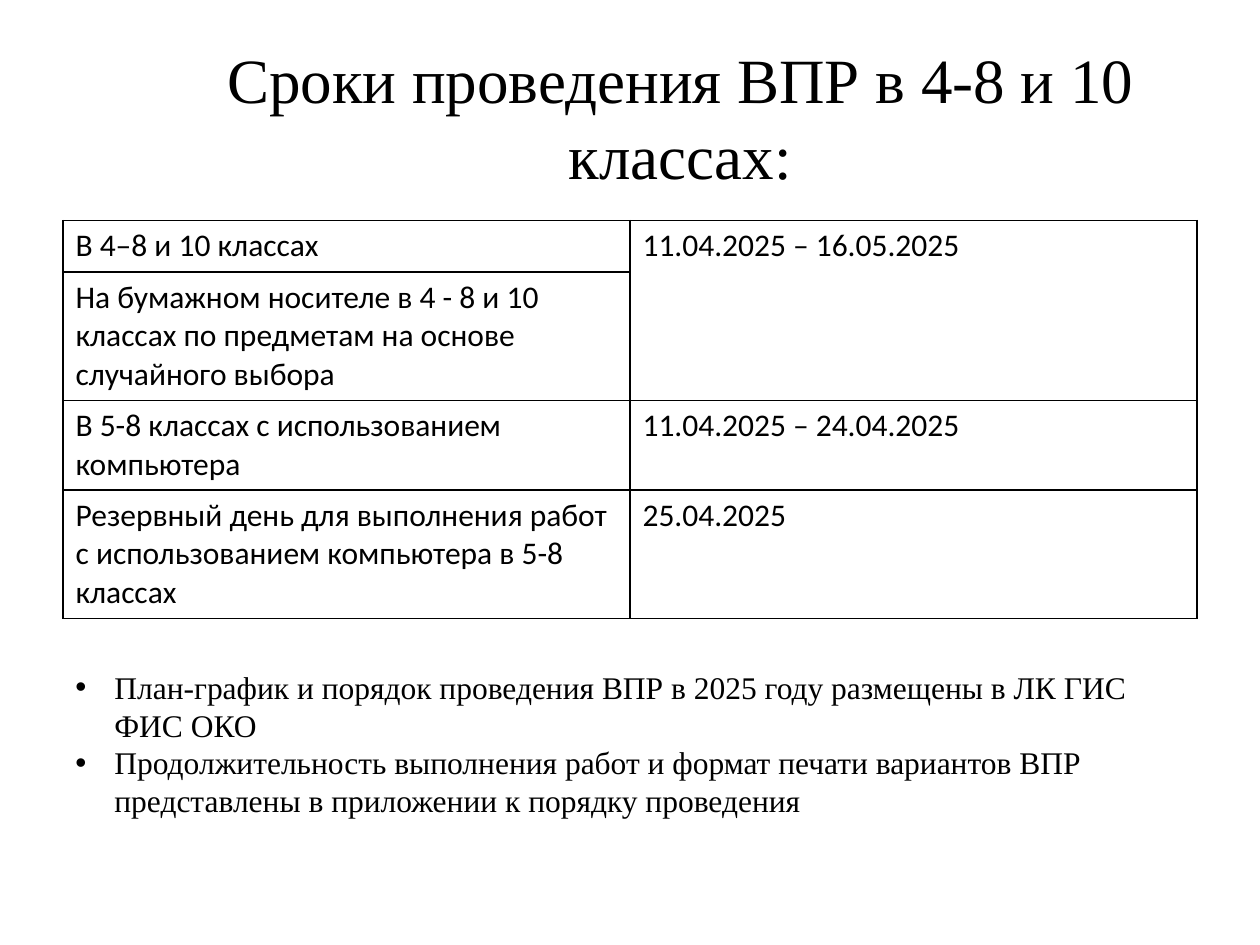
from dataclasses import dataclass
from typing import NamedTuple

from lxml.etree import SubElement
from pptx import Presentation
from pptx.dml.color import RGBColor
from pptx.enum.text import MSO_ANCHOR, PP_ALIGN
from pptx.oxml import parse_xml
from pptx.oxml.ns import nsdecls, qn
from pptx.util import Inches, Pt


@dataclass(frozen=True)
class Theme:
    ink: str = "000000"
    serif: str = "Times New Roman"
    sans: str = "Calibri"
    title: int = 36
    body: int = 18
    border: int = 1
    indent: float = 0.31


class Box(NamedTuple):
    left: float
    top: float
    width: float
    height: float

    def emu(self) -> list:
        return [Inches(v) for v in self]


class Row(NamedTuple):
    label: str
    dates: str
    height: float


THEME = Theme()
MARGIN = 0.5
CONTENT = 10 - 2 * MARGIN
TITLE_BOX = Box(1.3, 0.3, 8.2, 1.25)
NOTES_BOX = Box(MARGIN, 5.25, CONTENT, 1.31)
TABLE_TOP = 1.75
ROWS = [
    Row("В 4–8 и 10 классах", "11.04.2025 – 16.05.2025", 0.41),
    Row("На бумажном носителе в 4 - 8 и 10 классах по предметам "
        "на основе случайного выбора", "", 1.02),
    Row("В 5-8 классах с использованием компьютера",
        "11.04.2025 – 24.04.2025", 0.71),
    Row("Резервный день для выполнения работ с использованием "
        "компьютера в 5-8 классах", "25.04.2025", 1.02),
]
NOTES = [
    "План-график и порядок проведения ВПР в 2025 году размещены в ЛК ГИС ФИС ОКО",
    "Продолжительность выполнения работ и формат печати вариантов ВПР "
    "представлены в приложении к порядку проведения",
]


def write(p, text: str, *, font: str, size: int, align=PP_ALIGN.LEFT,
          bullet: bool = False) -> None:
    p.alignment = align
    if bullet:
        pPr = p._p.get_or_add_pPr()
        pPr.set("marL", str(Inches(THEME.indent)))
        pPr.set("indent", str(-Inches(THEME.indent)))
        SubElement(pPr, qn("a:buFont")).set("typeface", "Arial")
        SubElement(pPr, qn("a:buChar")).set("char", "•")
    r = p.add_run()
    r.text = text
    r.font.name = font
    r.font.size = Pt(size)
    r.font.color.rgb = RGBColor.from_string(THEME.ink)


def add_text(s, box: Box, lines: list[str], anchor=MSO_ANCHOR.TOP, **style) -> None:
    tf = s.shapes.add_textbox(*box.emu()).text_frame
    tf.word_wrap = True
    tf.vertical_anchor = anchor
    for i, line in enumerate(lines):
        write(tf.add_paragraph() if i else tf.paragraphs[0], line, **style)


def outline(cell) -> None:
    cell.fill.background()
    tcPr = cell._tc.get_or_add_tcPr()
    for i, side in enumerate("LRTB"):
        tcPr.insert(i, parse_xml(
            f'<a:ln{side} {nsdecls("a")} w="{Pt(THEME.border)}"><a:solidFill>'
            f'<a:srgbClr val="{THEME.ink}"/></a:solidFill></a:ln{side}>'))


def add_schedule(s, rows: list[Row]) -> None:
    box = Box(MARGIN, TABLE_TOP, CONTENT, sum(row.height for row in rows))
    table = s.shapes.add_table(len(rows), 2, *box.emu()).table
    table.first_row = table.horz_banding = False
    for i, row in enumerate(rows):
        table.rows[i].height = Inches(row.height)
        for j, text in enumerate((row.label, row.dates)):
            cell = table.cell(i, j)
            outline(cell)
            if text:
                write(cell.text_frame.paragraphs[0], text,
                      font=THEME.sans, size=THEME.body)
    table.cell(0, 1).merge(table.cell(1, 1))


def main() -> None:
    """Build the slide with the dates of the school tests."""
    prs = Presentation()
    prs.slide_width, prs.slide_height = Inches(10), Inches(7.5)
    s = prs.slides.add_slide(prs.slide_layouts[6])
    add_text(s, TITLE_BOX, ["Сроки проведения ВПР в 4-8 и 10 классах:"],
             anchor=MSO_ANCHOR.MIDDLE, font=THEME.serif, size=THEME.title,
             align=PP_ALIGN.CENTER)
    add_schedule(s, ROWS)
    add_text(s, NOTES_BOX, NOTES, font=THEME.serif, size=THEME.body, bullet=True)
    prs.save("out.pptx")


if __name__ == "__main__":
    main()
